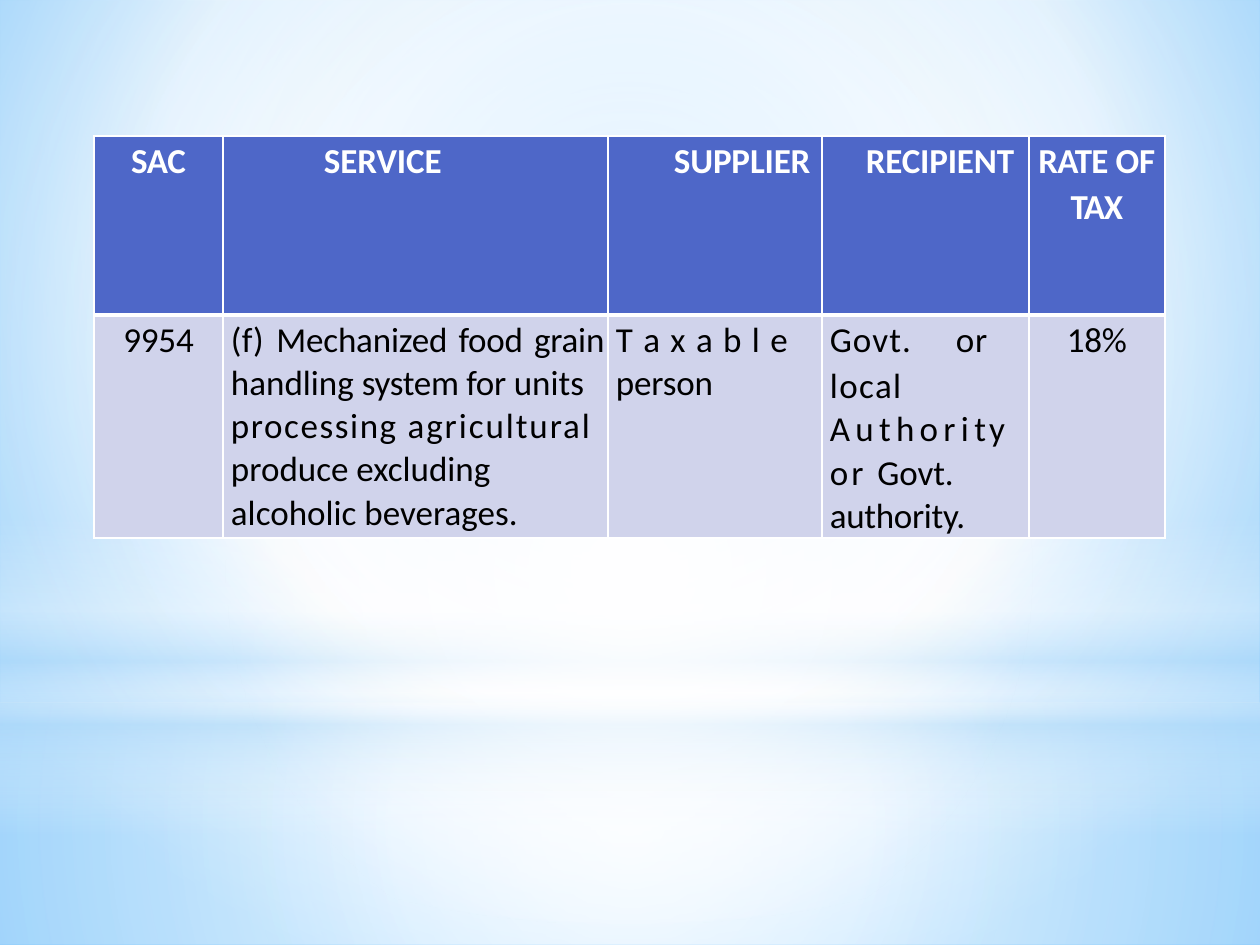
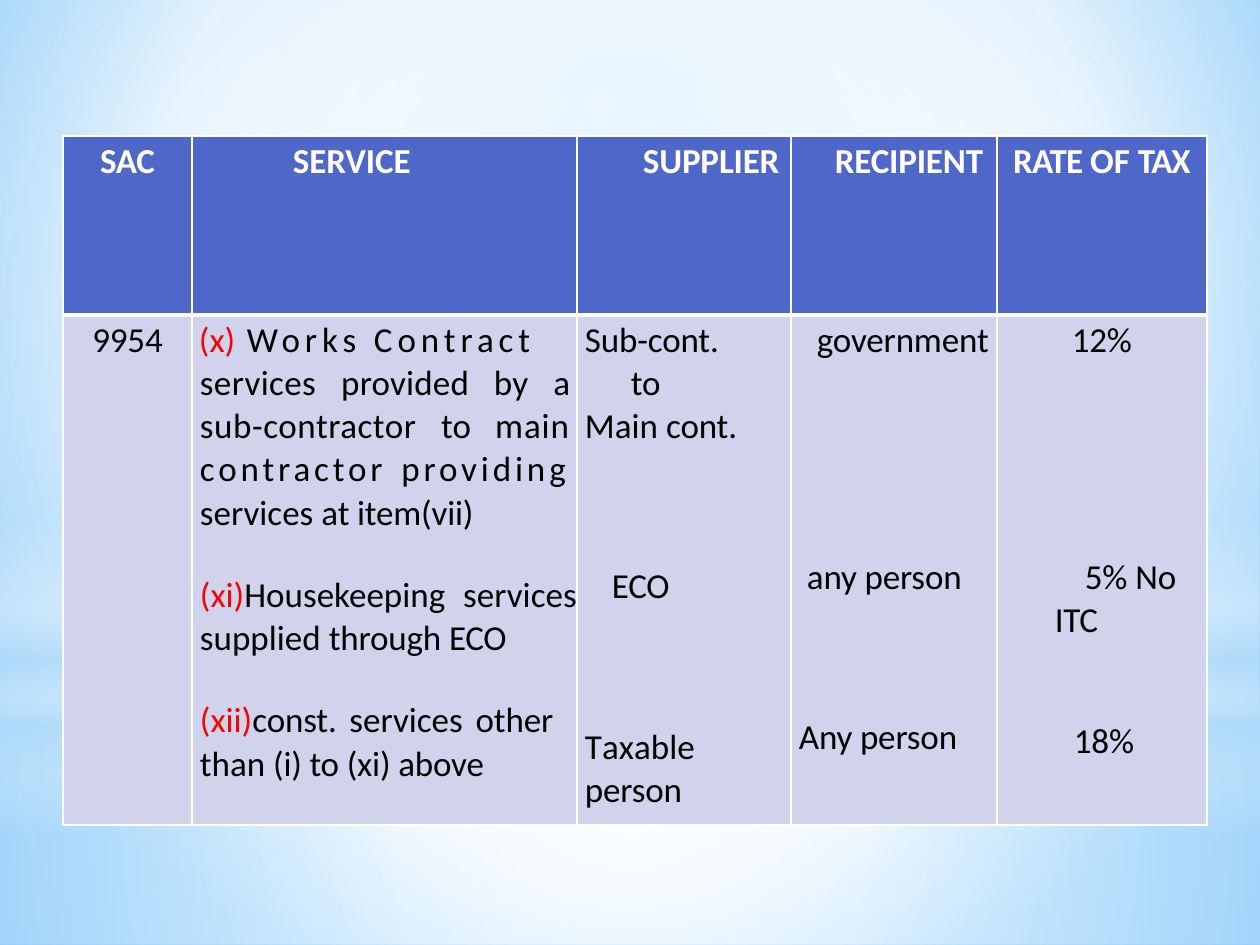
"""Build two slides of tax rate tables on a shared sky backdrop."""
from dataclasses import dataclass
from typing import NamedTuple

from lxml.etree import SubElement
from pptx import Presentation
from pptx.dml.color import RGBColor
from pptx.enum.shapes import MSO_SHAPE
from pptx.enum.text import PP_ALIGN
from pptx.oxml.ns import qn
from pptx.util import Emu, Pt

SCALE = 914400 / 126
WHITE = RGBColor(0xFF, 0xFF, 0xFF)
BLACK = RGBColor(0, 0, 0)
RED = RGBColor(0xFF, 0, 0)
INDIGO = RGBColor(0x4E, 0x67, 0xC8)
LILAC = RGBColor(0xD0, 0xD3, 0xEB)
SKY = RGBColor(0x9E, 0xD5, 0xFF)
AZURE = RGBColor(0x5B, 0xB9, 0xFF)
PALE = RGBColor(0xB4, 0xDC, 0xFA)
FONT = "Calibri"
CENTER, JUSTIFY = PP_ALIGN.CENTER, PP_ALIGN.JUSTIFY
PAD = 8
FIXED = Pt(26.6)
LOOSE = 1.01
MIDDLE = (50, 50, 50, 50)


class Stop(NamedTuple):
    at: int
    color: RGBColor
    alpha: int = 100


class Run(NamedTuple):
    text: str
    space: float = -0.1


@dataclass(frozen=True)
class Para:
    runs: tuple[Run, ...]
    left: int = PAD
    first: int = 0
    right: int = 0
    align: PP_ALIGN | None = None
    line: float | Pt = 1.0
    before: float = 0
    start: int = 0
    tab: int = 0


@dataclass(frozen=True)
class Band:
    kind: MSO_SHAPE
    top: int
    height: int
    stops: tuple[Stop, ...]
    focus: tuple[int, ...] | None = MIDDLE


@dataclass(frozen=True)
class Grid:
    left: int
    widths: tuple[int, ...]
    height: int
    body: tuple[tuple[Para, ...], ...]


def px(size: float) -> Emu:
    """Turn px into EMU."""
    return Emu(round(size * SCALE))


def lead(text: str, space: float = -0.1, left: int = PAD) -> Para:
    """Make the first line of a cell."""
    return Para((Run(text, space),), left, line=FIXED)


def mid(*runs: Run) -> Para:
    """Make a centred first line."""
    return Para(runs, 0, align=CENTER, line=FIXED)


SKY_STOPS = (Stop(0, SKY), Stop(60, WHITE), Stop(100, AZURE))
BANDS = (
    Band(MSO_SHAPE.RECTANGLE, 703, 242,
         (Stop(0, WHITE, 91), Stop(37, WHITE, 76), Stop(100, PALE, 79))),
    Band(MSO_SHAPE.RECTANGLE, 0, 703,
         (Stop(0, WHITE, 89), Stop(48, WHITE, 62), Stop(100, PALE, 79))),
    Band(MSO_SHAPE.RECTANGLE, 519, 315,
         (Stop(0, WHITE, 0), Stop(29, WHITE, 30), Stop(45, PALE, 40),
          Stop(55, WHITE, 26), Stop(65, PALE, 60), Stop(100, WHITE, 0)), None),
    Band(MSO_SHAPE.OVAL, 220, 703, (Stop(0, WHITE), Stop(56, WHITE, 0))),
)
HEAD = (
    (mid(Run("SAC", -0.2)),),
    (lead("SERVICE", left=101),),
    (lead("SUPPLIER", left=66),),
    (lead("RECIPIENT", left=44),),
    (mid(Run("RATE ", -0.5), Run("OF ", 0), Run("TAX", -0.7)),),
)
CODE = (mid(Run("9954")),)
GRAIN = Grid(94, (129, 385, 214, 207, 136), 220, (
    CODE,
    (Para((Run("(f)", 0.1), Run(" ", 2.5), Run("Mechanized"), Run(" ", 1.8),
           Run("food", -0.2), Run(" ", 1.8), Run("grain")), line=FIXED),
     Para((Run("handling ", 0), Run("system for ", -0.2), Run("units ", 0),
           Run("processing ", 0.9), Run("agricultural ", 1.1),
           Run("produce excluding alcoholic beverages.", 0)), line=LOOSE)),
    (lead("T a x a b l e", 0.7), Para((Run("person"),), before=0.2)),
    (Para((Run("Govt.\t", 0.6), Run("or ", 0.4), Run("local", 0.8)),
          line=FIXED, tab=136),
     Para((Run("Authori", 3), Run("ty or ", 1.7), Run("Govt. "),
           Run("authority.", -0.2)), line=LOOSE)),
    (mid(Run("18%")),),
))
WORKS = Grid(63, (129, 385, 214, 206, 210), 510, (
    CODE,
    (Para((Run("Works Contract", 2.8),), 55, -48, line=FIXED, start=10, tab=63),
     Para((Run("services ", 0.2), Run("provided by ", 0.1), Run("a ", 0),
           Run("sub-contractor ", 0.3), Run("to ", 0.1), Run("main ", 0.5),
           Run("contractor providing ", 2.2), Run("services ", 0),
           Run("at item(vii)")), right=7, align=JUSTIFY, line=LOOSE),
     Para((Run("Housekeeping services supplied ", 0), Run("through "),
           Run("ECO", -0.2)), align=JUSTIFY, line=LOOSE, before=22.3,
          start=11, tab=121),
     Para((Run("const. "), Run("services ", 0), Run("other "), Run("than", 0),
           Run(" (i) to (xi) above")), right=24, align=JUSTIFY, line=LOOSE,
          before=22.3, start=11, tab=88)),
    (lead("Sub-cont."),
     Para((Run("to"),), 54, before=0.2),
     Para((Run("Main ", 0), Run("cont.")), before=0.2),
     Para((Run("ECO", -0.2),), 35, before=67),
     Para((Run("T", -1.9), Run("a", -0.2), Run("x", -0.5), Run("able ", 0),
           Run("person")), line=LOOSE, before=67)),
    (lead("government", left=26),
     Para((Run("any person"),), 16, before=111),
     Para((Run("Any person"),), before=67)),
    (mid(Run("12%")),
     Para((Run("5% "), Run("No ", 0), Run("ITC", -0.2)), 58, 30,
          line=LOOSE, before=111),
     Para((Run("18%"),), 77, before=44.6)),
))


def add_tag(base, name: str, **attrs):
    """Add a drawing element with its attributes."""
    return SubElement(base, qn(f"a:{name}"),
                      {key: str(val) for key, val in attrs.items()})


def blend(fill, root, stops: tuple[Stop, ...], focus) -> None:
    """Swap the solid fill under a root for a gradient."""
    fill.solid()
    old = next(root.iter(qn("a:solidFill")))
    base = old.getparent()
    grad = add_tag(base, "gradFill", rotWithShape=1)
    base.replace(old, grad)
    chain = add_tag(grad, "gsLst")
    for stop in stops:
        tone = add_tag(add_tag(chain, "gs", pos=stop.at * 1000),
                       "srgbClr", val=stop.color)
        if stop.alpha < 100:
            add_tag(tone, "alpha", val=stop.alpha * 1000)
    if focus is None:
        add_tag(grad, "lin", ang=5400000, scaled=0)
    else:
        sides = {key: val * 1000 for key, val in zip("ltrb", focus)}
        add_tag(add_tag(grad, "path", path="circle"), "fillToRect", **sides)


def paint(master, slide) -> None:
    """Draw the backdrop and hand its bands to the master."""
    ground = master.background
    blend(ground.fill, master.element, SKY_STOPS, (20, 10, 20, 60))
    for band in BANDS:
        shape = slide.shapes.add_shape(band.kind, 0, px(band.top),
                                       px(1260), px(band.height))
        shape.shadow.inherit = False
        shape.line.fill.background()
        blend(shape.fill, shape.element.spPr, band.stops, band.focus)
        master.shapes.element.append(shape.element)


def write(para, data: Para, color: RGBColor, bold: bool) -> None:
    """Fill one paragraph."""
    para.alignment = data.align
    para.line_spacing = data.line
    para.space_before = Pt(data.before)
    props = para._p.get_or_add_pPr()
    for key, val in (("marL", data.left), ("marR", data.right),
                     ("indent", data.first)):
        props.set(key, str(px(val)))
    if data.start:
        add_tag(add_tag(props, "buClr"), "srgbClr", val=RED)
        add_tag(props, "buAutoNum", type="romanLcParenBoth", startAt=data.start)
    else:
        add_tag(props, "buNone")
    if data.tab:
        add_tag(add_tag(props, "tabLst"), "tab", pos=px(data.tab), algn="l")
    font = para.font
    font.name, font.size, font.bold = FONT, Pt(20), bold
    font.color.rgb = color
    for item in data.runs:
        run = para.add_run()
        run.text = item.text
        run._r.get_or_add_rPr().set("spc", str(round(item.space * 100)))


def edge(cell, top: int, base: int) -> None:
    """Rule the four sides of a cell in white."""
    props = cell._tc.get_or_add_tcPr()
    for spot, (side, width) in enumerate(
            (("L", 1), ("R", 1), ("T", top), ("B", base))):
        line = add_tag(props, f"ln{side}", w=Pt(width))
        add_tag(add_tag(line, "solidFill"), "srgbClr", val=WHITE)
        props.insert(spot, line)


def fill_cell(cell, paras: tuple[Para, ...], head: bool) -> None:
    """Style a cell and write its text."""
    cell.margin_left = cell.margin_right = 0
    cell.margin_top = cell.margin_bottom = 0
    cell.fill.solid()
    cell.fill.fore_color.rgb = INDIGO if head else LILAC
    edge(cell, 1 if head else 3, 3 if head else 1)
    frame = cell.text_frame
    for spot, data in enumerate(paras):
        para = frame.add_paragraph() if spot else frame.paragraphs[0]
        write(para, data, WHITE if head else BLACK, head)


def draw(slide, grid: Grid) -> None:
    """Draw a rate table."""
    tall = (179, grid.height)
    table = slide.shapes.add_table(2, len(grid.widths), px(grid.left), px(136),
                                   px(sum(grid.widths)), px(sum(tall))).table
    table.horz_banding = False
    for col, width in zip(table.columns, grid.widths):
        col.width = px(width)
    for spot, cells in enumerate((HEAD, grid.body)):
        table.rows[spot].height = px(tall[spot])
        for cell, paras in zip(table.rows[spot].cells, cells):
            fill_cell(cell, paras, spot == 0)


def main() -> None:
    """Build and save the deck."""
    deck = Presentation()
    deck.slide_width, deck.slide_height = px(1260), px(945)
    blank = deck.slide_layouts.get_by_name("Blank")
    slides = [deck.slides.add_slide(blank) for _ in range(2)]
    paint(deck.slide_master, slides[0])
    for slide, grid in zip(slides, (GRAIN, WORKS)):
        draw(slide, grid)
    deck.save("out.pptx")


if __name__ == "__main__":
    main()
